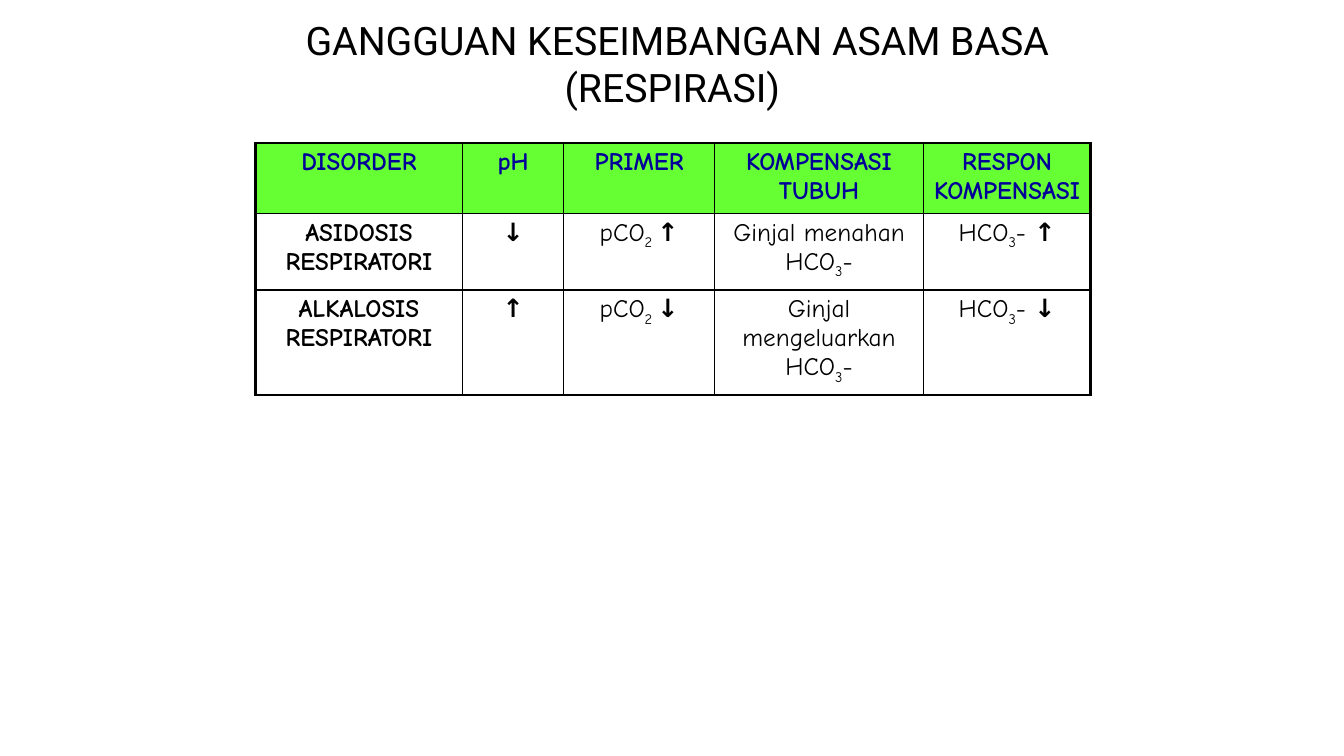
import pptx
import pptx.dml.color
import pptx.enum.text
import pptx.oxml
import pptx.oxml.ns
import pptx.util

Cm, Pt = pptx.util.Cm, pptx.util.Pt
CENTER = pptx.enum.text.PP_ALIGN.CENTER
TOP = pptx.enum.text.MSO_ANCHOR.TOP


def color(code):
    return pptx.dml.color.RGBColor.from_string(code)


class Deck:
    head = {"name": "Roboto", "size": Pt(28), "bold": False}
    body = {"name": "Comic Neue", "size": Pt(18)}
    ink, navy, green, white = "000000", "000099", "66FF33", "FFFFFF"
    thin, thick = 1, 2.25

    def __init__(self, show):
        self.slide = show.slides.add_slide(show.slide_layouts[6])

    def run(self, para, text, look, ink, bold, sub=False):
        run = para.add_run()
        run.text = text
        for key, value in {**look, "bold": bold}.items():
            setattr(run.font, key, value)
        run.font.color.rgb = color(ink)
        if sub:
            run._r.get_or_add_rPr().set("baseline", "-25000")

    def title(self, text, left, top, width, height):
        box = self.slide.shapes.add_textbox(Cm(left), Cm(top), Cm(width), Cm(height))
        frame = box.text_frame
        for key, value in {"word_wrap": True, "vertical_anchor": TOP,
                           "margin_top": Cm(0.2)}.items():
            setattr(frame, key, value)
        para = frame.paragraphs[0]
        para.alignment = CENTER
        self.run(para, text, self.head, self.ink, False)

    def border(self, cell, sides):
        props = cell._tc.get_or_add_tcPr()
        for spot, (side, width) in enumerate(sides.items()):
            props.insert(spot, pptx.oxml.parse_xml(
                f'<a:ln{side} {pptx.oxml.ns.nsdecls("a")} w="{Pt(width)}">'
                f'<a:solidFill><a:srgbClr val="{self.ink}"/></a:solidFill>'
                f'</a:ln{side}>'))

    def cell(self, cell, text, header, label):
        cell.fill.solid()
        cell.fill.fore_color.rgb = color(self.green if header else self.white)
        para = cell.text_frame.paragraphs[0]
        para.alignment = CENTER
        # Pieces between bars: plain, subscript, plain, bold arrow
        for spot, piece in enumerate(text.split("|")):
            if piece:
                self.run(para, piece, self.body, self.navy if header else self.ink,
                         header or label or spot == 3, spot == 1)

    def table(self, data, left, top, cols, rows):
        grid = self.slide.shapes.add_table(
            len(rows), len(cols), Cm(left), Cm(top), Cm(sum(cols)), Cm(sum(rows))).table
        for col, width in zip(grid.columns, cols):
            col.width = Cm(width)
        for row, height in zip(grid.rows, rows):
            row.height = Cm(height)
        for r, line in enumerate(data):
            for c, text in enumerate(line):
                cell = grid.cell(r, c)
                self.cell(cell, text, r == 0, c < 2)
                edges = {"L": c == 0, "R": c == len(cols) - 1,
                         "T": r == 0, "B": r == len(rows) - 1}
                self.border(cell, {side: self.thick if outer else self.thin
                                   for side, outer in edges.items()})


def main():
    show = pptx.Presentation()
    show.slide_width, show.slide_height = Cm(33.87), Cm(19.05)
    deck = Deck(show)

    # Heading
    deck.title(" GANGGUAN KESEIMBANGAN ASAM BASA (RESPIRASI)", 6.15, 0.2, 21.59, 3.18)

    # Respiratory disorders
    data = [
        ["DISORDER", "pH", "PRIMER", "KOMPENSASI TUBUH", "RESPON KOMPENSASI"],
        ["ASIDOSIS RESPIRATORI", "↓", "pCO|2 ||↑", "Ginjal menahan HCO|3|-", "HCO|3|- |↑"],
        ["ALKALOSIS RESPIRATORI", "↑", "pCO|2 ||↓", "Ginjal mengeluarkan HCO|3|-",
         "HCO|3|- |↓"],
    ]
    deck.table(data, 6.43, 3.6, [5.23, 2.54, 3.81, 5.26, 4.22], [1.72, 1.93, 2.54])

    show.save("out.pptx")


if __name__ == "__main__":
    main()
